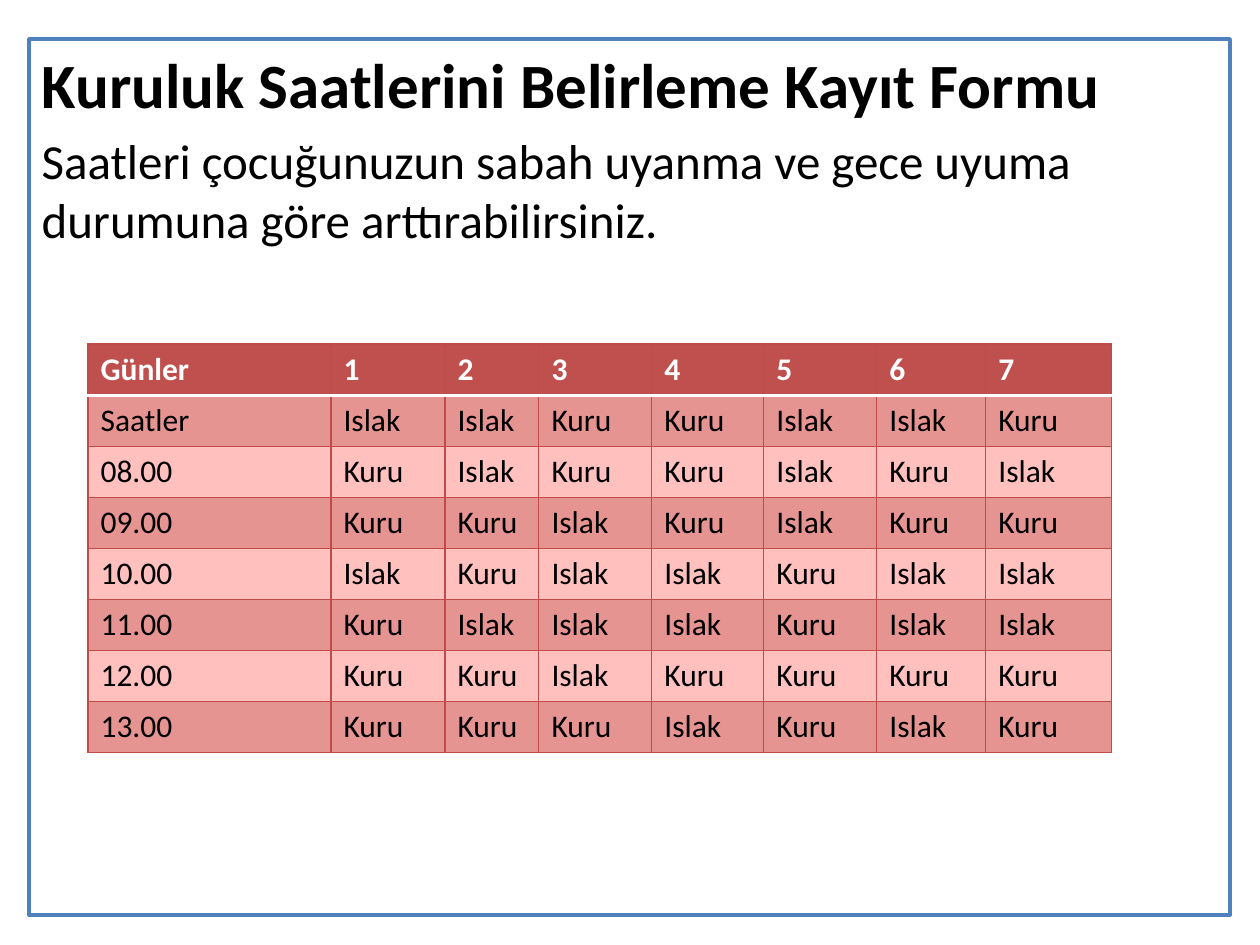
"""Build a slide holding a weekly dryness record form."""
from dataclasses import dataclass

import pptx
import pptx.dml.color
import pptx.enum.text
import pptx.oxml
import pptx.oxml.ns
import pptx.util

RGBColor = pptx.dml.color.RGBColor
WHITE = RGBColor(0xFF, 0xFF, 0xFF)
BLACK = RGBColor(0x00, 0x00, 0x00)
BLUE = RGBColor(0x4F, 0x81, 0xBD)
RED = RGBColor(0xC0, 0x50, 0x4D)
GRID_RED = RGBColor(0xBF, 0x4C, 0x48)
DARK_PINK = RGBColor(0xE6, 0x94, 0x91)
LIGHT_PINK = RGBColor(0xFF, 0xC0, 0xBE)

FONT = "Calibri"
PX_PER_INCH = 126
ROW_HEIGHT = 51
COLUMN_WIDTHS = (243, 114, 94, 113, 112, 113, 109, 126)
RECORDS = (
    "Günler 1 2 3 4 5 6 7",
    "Saatler Islak Islak Kuru Kuru Islak Islak Kuru",
    "08.00 Kuru Islak Kuru Kuru Islak Kuru Islak",
    "09.00 Kuru Kuru Islak Kuru Islak Kuru Kuru",
    "10.00 Islak Kuru Islak Islak Kuru Islak Islak",
    "11.00 Kuru Islak Islak Islak Kuru Islak Islak",
    "12.00 Kuru Kuru Islak Kuru Kuru Kuru Kuru",
    "13.00 Kuru Kuru Kuru Islak Kuru Islak Kuru",
)


@dataclass(frozen=True)
class RowStyle:
    fill: RGBColor
    text: RGBColor
    bold: bool = False


@dataclass(frozen=True)
class Border:
    color: RGBColor
    points: float


HEADER = RowStyle(RED, WHITE, True)
BANDS = (RowStyle(LIGHT_PINK, BLACK), RowStyle(DARK_PINK, BLACK))
GRID = Border(GRID_RED, 0.75)
HEADER_RULE = Border(WHITE, 2)


def px(length: int) -> int:
    return pptx.util.Emu(round(length * 914400 / PX_PER_INCH))


def write(paragraph, text: str, *, size: float, color: RGBColor = BLACK, bold: bool = False) -> None:
    run = paragraph.add_run()
    run.text = text
    run.font.name = FONT
    run.font.size = pptx.util.Pt(size)
    run.font.bold = bold
    run.font.color.rgb = color


def remove_bullet(paragraph) -> None:
    properties = paragraph._p.get_or_add_pPr()
    properties.set("marL", "0")
    properties.set("indent", "0")
    properties.append(pptx.oxml.parse_xml(f"<a:buNone {pptx.oxml.ns.nsdecls('a')}/>"))


def set_border(cell, side: str, border: Border) -> None:
    cell._tc.get_or_add_tcPr().append(pptx.oxml.parse_xml(
        f"<a:ln{side} {pptx.oxml.ns.nsdecls('a')} w='{pptx.util.Pt(border.points)}'>"
        f"<a:solidFill><a:srgbClr val='{border.color}'/></a:solidFill></a:ln{side}>"
    ))


def draw_instructions(body) -> None:
    body.left, body.top, body.width, body.height = map(px, (29, 39, 1201, 876))
    body.fill.solid()
    body.fill.fore_color.rgb = WHITE
    body.line.color.rgb = BLUE
    body.line.width = pptx.util.Pt(2)
    frame = body.text_frame
    frame.auto_size = pptx.enum.text.MSO_AUTO_SIZE.NONE
    heading, guidance = frame.paragraphs[0], frame.add_paragraph()
    write(heading, "Kuruluk Saatlerini Belirleme Kayıt Formu", size=36, bold=True)
    write(
        guidance,
        "Saatleri çocuğunuzun sabah uyanma ve gece uyuma durumuna göre arttırabilirsiniz.",
        size=28,
    )
    for paragraph in (heading, guidance):
        remove_bullet(paragraph)


def draw_records(slide) -> None:
    records = slide.shapes.add_table(
        len(RECORDS), len(COLUMN_WIDTHS), px(88), px(344),
        px(sum(COLUMN_WIDTHS)), px(ROW_HEIGHT * len(RECORDS)),
    ).table
    for column, width in zip(records.columns, COLUMN_WIDTHS):
        column.width = px(width)
    for index, (row, record) in enumerate(zip(records.rows, RECORDS)):
        row.height = px(ROW_HEIGHT)
        style = BANDS[index % 2] if index else HEADER
        borders = {
            "L": GRID,
            "R": GRID,
            "T": HEADER_RULE if index == 1 else GRID,
            "B": HEADER_RULE if index == 0 else GRID,
        }
        for cell, entry in zip(row.cells, record.split()):
            for side, border in borders.items():
                set_border(cell, side, border)
            cell.fill.solid()
            cell.fill.fore_color.rgb = style.fill
            write(cell.text_frame.paragraphs[0], entry, size=18, color=style.text, bold=style.bold)


def main() -> None:
    presentation = pptx.Presentation()
    presentation.slide_width = pptx.util.Inches(10)
    presentation.slide_height = pptx.util.Inches(7.5)
    slide = presentation.slides.add_slide(presentation.slide_layouts[1])
    empty_title = slide.shapes.title.element
    empty_title.getparent().remove(empty_title)
    draw_instructions(slide.placeholders[1])
    draw_records(slide)
    presentation.save("out.pptx")


if __name__ == "__main__":
    main()
